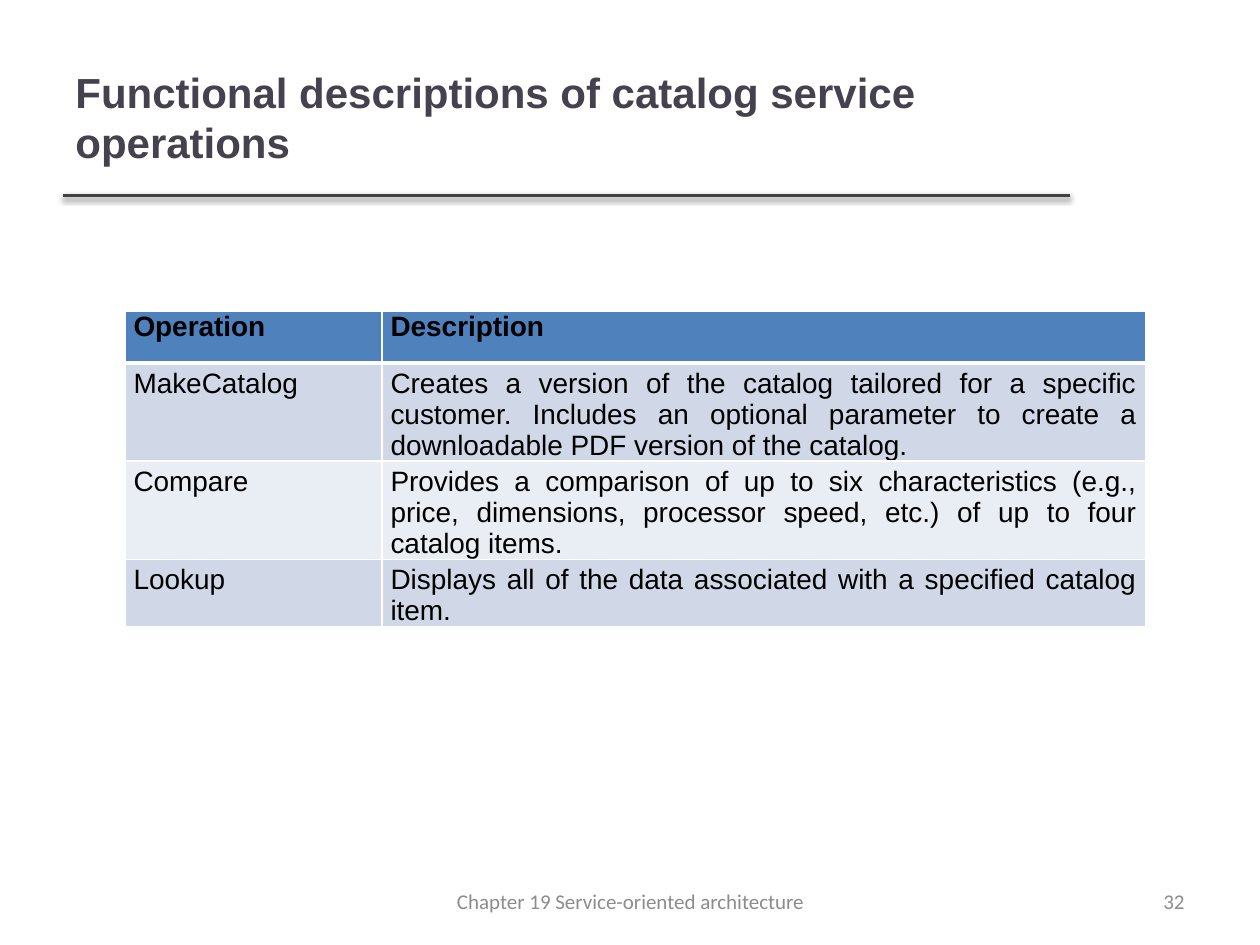
from dataclasses import dataclass

import lxml.etree
import pptx
import pptx.dml.color
import pptx.enum.shapes
import pptx.enum.text
import pptx.oxml
import pptx.oxml.ns
import pptx.slide
import pptx.text.text
import pptx.util
from pptx.util import Inches

ALIGN = pptx.enum.text.PP_ALIGN
COLORS = {
    "title": "46424D", "rule": "404040", "shadow": "000000", "text": "000000",
    "header": "4F81BD", "band_dark": "D0D8E8", "band_light": "E9EDF4",
    "border": "FFFFFF", "footer": "8C8C8C",
}
COLUMN_WIDTHS = (2.04, 6.06)
ROW_HEIGHT = 0.41
ROWS = (
    ("Operation", "Description"),
    ("MakeCatalog", "Creates a version of the catalog tailored for a specific customer. "
     "Includes an optional parameter to create a downloadable PDF version of the catalog."),
    ("Compare", "Provides a comparison of up to six characteristics (e.g., price, "
     "dimensions, processor speed, etc.) of up to four catalog items."),
    ("Lookup", "Displays all of the data associated with a specified catalog item."),
)


@dataclass
class Label:
    text: str
    left: float
    top: float
    width: float
    height: float
    size: int
    font: str
    color: str
    align: ALIGN
    bold: bool = False


LABELS = (
    Label("Functional descriptions of catalog service operations",
          0.5, 0.3, 7.98, 1.25, 24, "Arial", "title", ALIGN.LEFT, True),
    Label("32", 7.17, 6.95, 2.33, 0.4, 12, "Calibri", "footer", ALIGN.RIGHT),
    Label("Chapter 19 Service-oriented architecture",
          3.42, 6.95, 3.17, 0.4, 12, "Calibri", "footer", ALIGN.CENTER),
)


def rgb(name: str) -> pptx.dml.color.RGBColor:
    return pptx.dml.color.RGBColor.from_string(COLORS[name])


def format_paragraph(para: pptx.text.text._Paragraph, size: int, font: str,
                     color: str, align: ALIGN, bold: bool) -> None:
    para.alignment = align
    for span in para.runs:
        span.font.size = pptx.util.Pt(size)
        span.font.name = font
        span.font.bold = bold
        span.font.color.rgb = rgb(color)


def add_label(page: pptx.slide.Slide, label: Label) -> None:
    box = page.shapes.add_textbox(Inches(label.left), Inches(label.top),
                                  Inches(label.width), Inches(label.height))
    frame = box.text_frame
    frame.word_wrap = True
    frame.vertical_anchor = pptx.enum.text.MSO_ANCHOR.MIDDLE
    frame.text = label.text
    format_paragraph(frame.paragraphs[0], label.size, label.font,
                     label.color, label.align, label.bold)


def add_rule(page: pptx.slide.Slide) -> None:
    rule = page.shapes.add_connector(pptx.enum.shapes.MSO_CONNECTOR.STRAIGHT,
                                     Inches(0.5), Inches(1.55), Inches(8.49), Inches(1.55))
    rule.line.color.rgb = rgb("rule")
    rule.line.width = pptx.util.Pt(2)
    rule._element.spPr.append(pptx.oxml.parse_xml(
        f'<a:effectLst {pptx.oxml.ns.nsdecls("a")}>'
        f'<a:outerShdw blurRad="{pptx.util.Pt(3.1)}" dist="{pptx.util.Pt(1.6)}" '
        f'dir="5400000" rotWithShape="0"><a:srgbClr val="{COLORS["shadow"]}">'
        '<a:alpha val="38000"/></a:srgbClr></a:outerShdw></a:effectLst>'))


def set_borders(cell, bottom_points: int) -> None:
    properties = cell._tc.get_or_add_tcPr()
    for side, points in (("L", 1), ("R", 1), ("T", 1), ("B", bottom_points)):
        line = lxml.etree.SubElement(properties, pptx.oxml.ns.qn(f"a:ln{side}"),
                                     w=str(pptx.util.Pt(points)))
        fill = lxml.etree.SubElement(line, pptx.oxml.ns.qn("a:solidFill"))
        lxml.etree.SubElement(fill, pptx.oxml.ns.qn("a:srgbClr"), val=COLORS["border"])


def fill_cell(cell, text: str, row_index: int) -> None:
    is_header = row_index == 0
    set_borders(cell, 3 if is_header else 1)
    band = "band_dark" if row_index % 2 else "band_light"
    cell.fill.solid()
    cell.fill.fore_color.rgb = rgb("header" if is_header else band)
    cell.margin_left = cell.margin_right = Inches(0.07)
    cell.margin_top = Inches(0 if is_header else 0.04)
    cell.margin_bottom = Inches(0)
    cell.text_frame.text = text
    para = cell.text_frame.paragraphs[0]
    format_paragraph(para, 16, "Arial", "text", ALIGN.JUSTIFY, is_header)
    if is_header:
        para.space_after = pptx.util.Pt(3)


def add_operations_table(page: pptx.slide.Slide) -> None:
    table = page.shapes.add_table(len(ROWS), len(COLUMN_WIDTHS), Inches(0.99), Inches(2.47),
                                  Inches(sum(COLUMN_WIDTHS)),
                                  Inches(ROW_HEIGHT * len(ROWS))).table
    for column, width in zip(table.columns, COLUMN_WIDTHS):
        column.width = Inches(width)
    for row_index, texts in enumerate(ROWS):
        table.rows[row_index].height = Inches(ROW_HEIGHT)
        for column_index, text in enumerate(texts):
            fill_cell(table.cell(row_index, column_index), text, row_index)


def main() -> None:
    deck = pptx.Presentation()
    deck.slide_width, deck.slide_height = Inches(10), Inches(7.5)
    page = deck.slides.add_slide(deck.slide_layouts[6])
    # Rule under the title
    add_rule(page)
    # Catalog operations
    add_operations_table(page)
    # Title, page number and footer
    for label in LABELS:
        add_label(page, label)
    deck.save("out.pptx")


if __name__ == "__main__":
    main()
